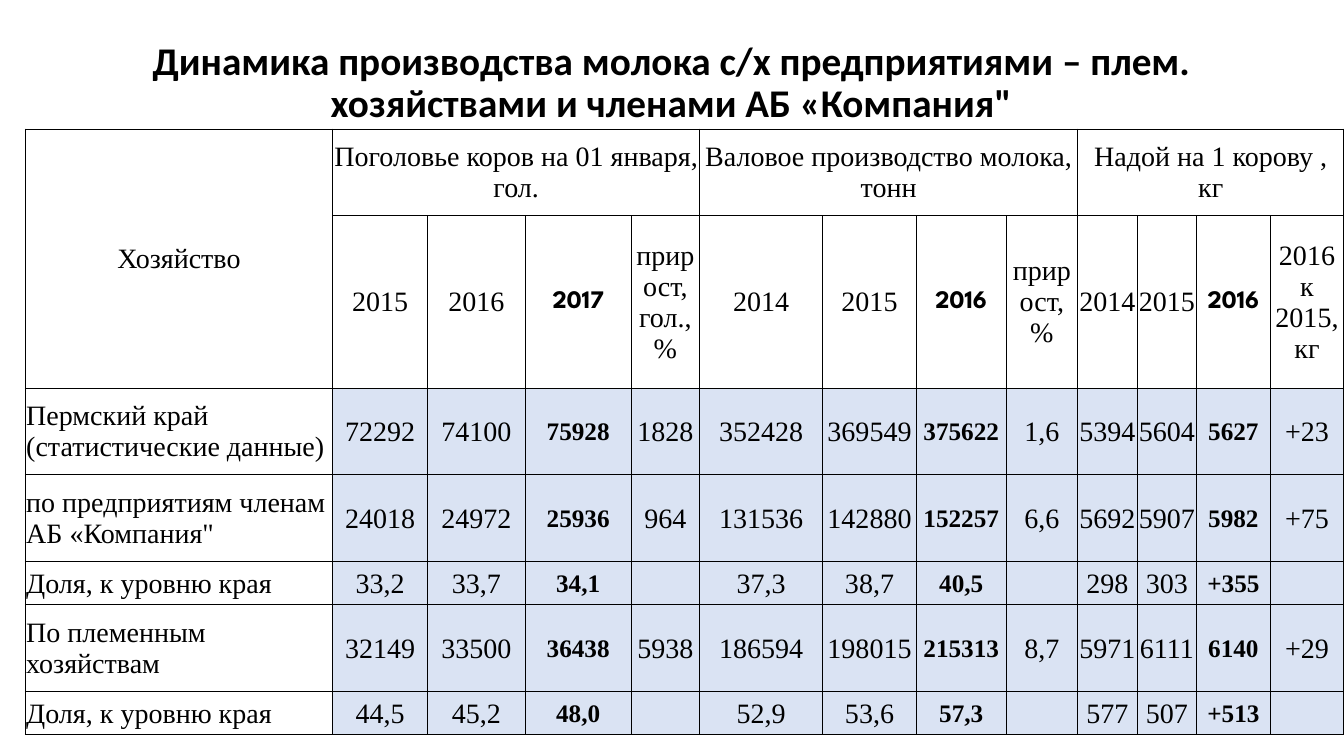
import lxml.etree
import pptx
import pptx.dml.color
import pptx.enum.text
import pptx.oxml.ns
import pptx.util
from pptx.util import Inches

COLORS = {"text": "000000", "border": "000000", "data": "DAE3F3"}
ALIGN = pptx.enum.text.PP_ALIGN
MIDDLE = pptx.enum.text.MSO_ANCHOR.MIDDLE

TITLE = "Динамика производства молока с/х предприятиями – плем. хозяйствами и членами АБ «Компания\""
COLUMN_WIDTHS = [3.05, 0.94, 0.97, 1.05, 0.68, 1.22, 0.93, 0.89, 0.71, 0.59, 0.59, 0.73, 0.73]
ROW_HEIGHTS = [0.86, 1.71, 0.86, 0.86, 0.43, 0.86, 0.43]
HEADER_ROWS = 2
GROUP_SIZE = 4
GROUPS = ["Поголовье коров на 01 января, гол.", "Валовое производство молока, тонн",
          "Надой на 1 корову , кг"]
ROWS = [
    ["Хозяйство"] + [text for group in GROUPS for text in [group] + [""] * (GROUP_SIZE - 1)],
    ["", "2015", "2016", "2017", "прирост, гол., %", "2014", "2015", "2016", "прирост, %",
     "2014", "2015", "2016", "2016 к 2015, кг"],
    ["Пермский край (статистические данные)", "72292", "74100", "75928", "1828",
     "352428", "369549", "375622", "1,6", "5394", "5604", "5627", "+23"],
    ["по предприятиям членам АБ «Компания\"", "24018", "24972", "25936", "964",
     "131536", "142880", "152257", "6,6", "5692", "5907", "5982", "+75"],
    ["Доля, к уровню края", "33,2", "33,7", "34,1", "",
     "37,3", "38,7", "40,5", "", "298", "303", "+355", ""],
    ["По племенным хозяйствам", "32149", "33500", "36438", "5938",
     "186594", "198015", "215313", "8,7", "5971", "6111", "6140", "+29"],
    ["Доля, к уровню края", "44,5", "45,2", "48,0", "",
     "52,9", "53,6", "57,3", "", "577", "507", "+513", ""],
]


def rgb(name):
    return pptx.dml.color.RGBColor.from_string(COLORS[name])


def set_all(obj, values):
    for name, value in values.items():
        setattr(obj, name, value)


def write(tf, text, font, size, bold=False, align=ALIGN.CENTER):
    """Put one formatted run into the first paragraph of a text frame."""
    p = tf.paragraphs[0]
    p.alignment = align
    r = p.add_run()
    r.text = text
    set_all(r.font, {"name": font, "size": pptx.util.Pt(size), "bold": bold})
    r.font.color.rgb = rgb("text")


def add_title(s):
    sp = s.shapes.title
    set_all(sp, {"left": Inches(0.73), "top": Inches(0.25),
                 "width": Inches(11.85), "height": Inches(1.16)})
    set_all(sp.text_frame, {"word_wrap": True, "vertical_anchor": MIDDLE,
                            "auto_size": pptx.enum.text.MSO_AUTO_SIZE.NONE})
    write(sp.text_frame, TITLE, "Calibri", 28, bold=True)
    sp.text_frame.paragraphs[0].line_spacing = 0.9


def add_borders(cell):
    tcPr = cell._tc.get_or_add_tcPr()
    qn = pptx.oxml.ns.qn
    for side in ("lnL", "lnR", "lnT", "lnB"):
        ln = lxml.etree.SubElement(tcPr, qn("a:" + side), w=str(pptx.util.Pt(0.5)))
        fill = lxml.etree.SubElement(ln, qn("a:solidFill"))
        lxml.etree.SubElement(fill, qn("a:srgbClr"), val=COLORS["border"])


def format_cell(cell, row, col):
    """Set borders, fill, margins and text by the cell's place in the table."""
    is_header = row < HEADER_ROWS
    is_label = col == 0
    add_borders(cell)
    if is_header or is_label:
        cell.fill.background()
    else:
        cell.fill.solid()
        cell.fill.fore_color.rgb = rgb("data")
    set_all(cell, {"vertical_anchor": MIDDLE, "margin_left": Inches(0.01),
                   "margin_right": Inches(0.01), "margin_top": Inches(0.01),
                   "margin_bottom": 0})
    text = ROWS[row][col]
    if not text:
        return
    is_latest_year = row > 0 and col % GROUP_SIZE == 3
    write(cell.text_frame, text,
          font="League Spartan" if is_header and is_latest_year else "Times New Roman",
          size=18 if is_latest_year else 20,
          bold=is_latest_year,
          align=ALIGN.LEFT if is_label and not is_header else ALIGN.CENTER)


def add_milk_table(s):
    table = s.shapes.add_table(len(ROWS), len(COLUMN_WIDTHS), Inches(0.25), Inches(1.28),
                               Inches(13.09), Inches(6)).table
    set_all(table, {"first_row": False, "horz_banding": False})
    for column, width in zip(table.columns, COLUMN_WIDTHS):
        column.width = Inches(width)
    for table_row, height in zip(table.rows, ROW_HEIGHTS):
        table_row.height = Inches(height)
    for row in range(len(ROWS)):
        for col in range(len(COLUMN_WIDTHS)):
            format_cell(table.cell(row, col), row, col)
    table.cell(0, 0).merge(table.cell(HEADER_ROWS - 1, 0))
    for col in range(1, len(COLUMN_WIDTHS), GROUP_SIZE):
        table.cell(0, col).merge(table.cell(0, col + GROUP_SIZE - 1))


def main():
    prs = pptx.Presentation()
    set_all(prs, {"slide_width": Inches(13.33), "slide_height": Inches(7.5)})
    s = prs.slides.add_slide(prs.slide_layouts[5])
    add_title(s)
    add_milk_table(s)
    prs.save("out.pptx")


if __name__ == "__main__":
    main()
